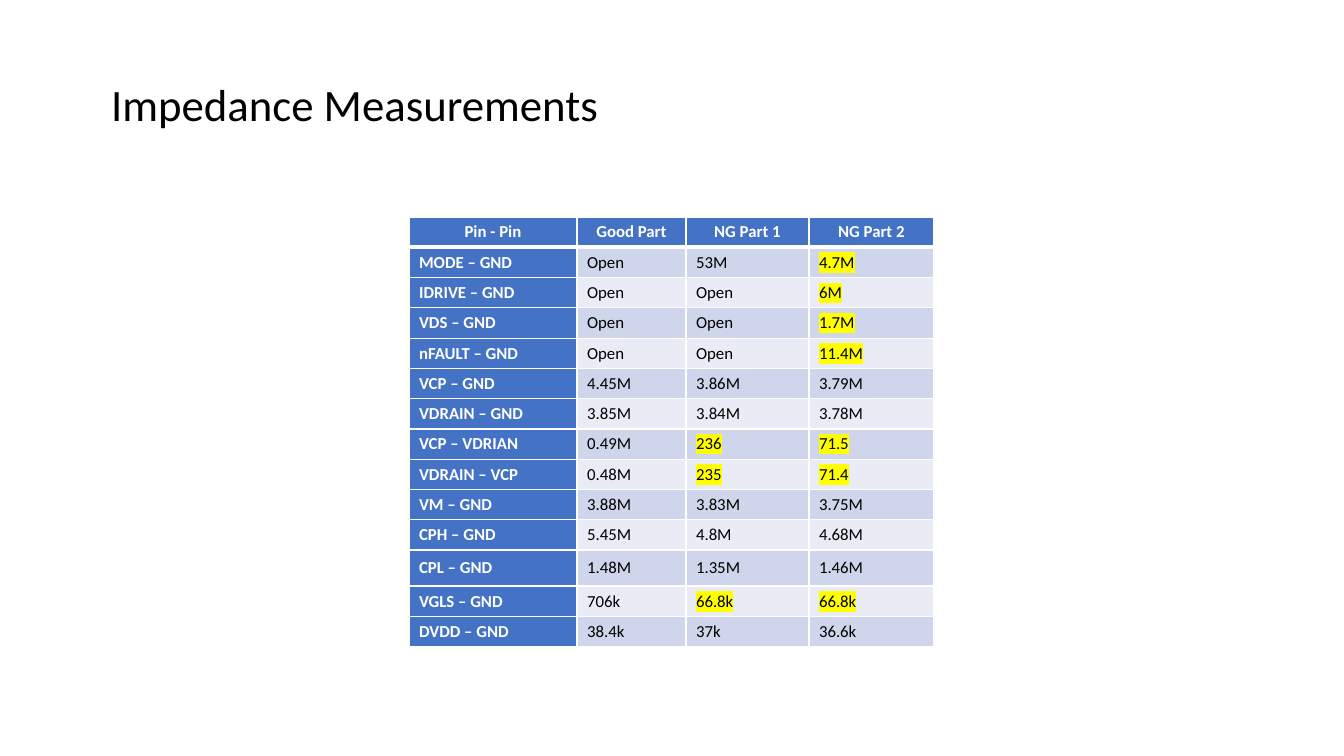
from lxml import etree
from pptx import Presentation
from pptx.dml.color import RGBColor
from pptx.enum.text import MSO_ANCHOR, MSO_AUTO_SIZE, PP_ALIGN
from pptx.oxml.ns import qn
from pptx.util import Emu, Pt

LEFT = PP_ALIGN.LEFT
CENTER = PP_ALIGN.CENTER
JUSTIFY = PP_ALIGN.JUSTIFY
TOP = MSO_ANCHOR.TOP
MIDDLE = MSO_ANCHOR.MIDDLE
FIT_SHAPE = MSO_AUTO_SIZE.SHAPE_TO_FIT_TEXT

WHITE = RGBColor(0xFF, 0xFF, 0xFF)
BLACK = RGBColor(0x00, 0x00, 0x00)
BLUE = RGBColor(0x44, 0x72, 0xC4)
BAND_DARK = RGBColor(0xCF, 0xD5, 0xEA)
BAND_LIGHT = RGBColor(0xE9, 0xEB, 0xF5)
YELLOW = RGBColor(0xFF, 0xFF, 0x00)

SLIDE_WIDTH, SLIDE_HEIGHT = 1344, 756
EMU_PER_PX = 12192000 / SLIDE_WIDTH
TITLE_ONLY = 5

HEADINGS = ("Pin - Pin", "Good Part", "NG Part 1", "NG Part 2")
MEASUREMENTS = (
    ("MODE – GND", "Open", "53M", "4.7M"),
    ("IDRIVE – GND", "Open", "Open", "6M"),
    ("VDS – GND", "Open", "Open", "1.7M"),
    ("nFAULT – GND", "Open", "Open", "11.4M"),
    ("VCP – GND", "4.45M", "3.86M", "3.79M"),
    ("VDRAIN – GND", "3.85M", "3.84M", "3.78M"),
    ("VCP – VDRIAN", "0.49M", "236", "71.5"),
    ("VDRAIN – VCP", "0.48M", "235", "71.4"),
    ("VM – GND", "3.88M", "3.83M", "3.75M"),
    ("CPH – GND", "5.45M", "4.8M", "4.68M"),
    ("CPL – GND", "1.48M", "1.35M", "1.46M"),
    ("VGLS – GND", "706k", "66.8k", "66.8k"),
    ("DVDD – GND", "38.4k", "37k", "36.6k"),
)
SUSPECT_READINGS = {"4.7M", "6M", "1.7M", "11.4M", "236", "71.5", "235", "71.4", "66.8k"}
COLUMN_WIDTHS = (168, 109, 123, 125)
ROW_HEIGHT = 30
TALL_ROW_HEIGHT = 36
TALL_PIN = "CPL – GND"


def px(length):
    return Emu(round(length * EMU_PER_PX))


class SlideBuilder:
    font = "Calibri"
    title_size = 32
    cell_size = 12

    def __init__(self, deck):
        self.slide = deck.slides.add_slide(deck.slide_layouts[TITLE_ONLY])

    def run(self, paragraph, text, size, color, bold=False, highlight=None):
        run = paragraph.add_run()
        run.text = text
        run.font.size = Pt(size)
        run.font.bold = bold
        run.font.color.rgb = color
        run.font.name = self.font
        if highlight is not None:
            mark = etree.Element(qn("a:highlight"))
            etree.SubElement(mark, qn("a:srgbClr"), val=str(highlight))
            run._r.get_or_add_rPr().find(qn("a:solidFill")).addnext(mark)

    def title(self, text, left, top, width, height):
        title = self.slide.shapes.title
        title.left, title.top = px(left), px(top)
        title.width, title.height = px(width), px(height)
        frame = title.text_frame
        frame.word_wrap = True
        frame.auto_size = FIT_SHAPE
        frame.vertical_anchor = TOP
        paragraph = frame.paragraphs[0]
        paragraph.alignment = LEFT
        self.run(paragraph, text, self.title_size, BLACK)

    def borders(self, cell, top, bottom):
        properties = cell._tc.get_or_add_tcPr()
        sides = (("a:lnL", 1), ("a:lnR", 1), ("a:lnT", top), ("a:lnB", bottom))
        for position, (side, points) in enumerate(sides):
            line = etree.Element(qn(side), w=str(Pt(points)))
            fill = etree.SubElement(line, qn("a:solidFill"))
            etree.SubElement(fill, qn("a:srgbClr"), val=str(WHITE))
            properties.insert(position, line)

    def cell(self, cell, text, row, column):
        is_heading = row == 0
        is_label = is_heading or column == 0
        band = BAND_DARK if row % 2 else BAND_LIGHT
        cell.fill.solid()
        cell.fill.fore_color.rgb = BLUE if is_label else band
        self.borders(cell, 3 if row == 1 else 1, 3 if is_heading else 1)
        cell.vertical_anchor = MIDDLE
        paragraph = cell.text_frame.paragraphs[0]
        paragraph.alignment = CENTER if is_heading else JUSTIFY
        self.run(paragraph, text, self.cell_size, WHITE if is_label else BLACK,
                 is_label, YELLOW if text in SUSPECT_READINGS else None)

    def table(self, records, left, top, widths, heights):
        table = self.slide.shapes.add_table(
            len(records), len(widths), px(left), px(top),
            px(sum(widths)), px(sum(heights))).table
        table.horz_banding = False
        for column, width in zip(table.columns, widths):
            column.width = px(width)
        for row, height in zip(table.rows, heights):
            row.height = px(height)
        for row, record in enumerate(records):
            for column, text in enumerate(record):
                self.cell(table.cell(row, column), text, row, column)


def main():
    deck = Presentation()
    deck.slide_width, deck.slide_height = px(SLIDE_WIDTH), px(SLIDE_HEIGHT)
    builder = SlideBuilder(deck)
    builder.title("Impedance Measurements", 101, 72, 622, 64)
    records = (HEADINGS,) + MEASUREMENTS
    heights = [TALL_ROW_HEIGHT if record[0] == TALL_PIN else ROW_HEIGHT
               for record in records]
    builder.table(records, 409, 217, COLUMN_WIDTHS, heights)
    deck.save("out.pptx")


if __name__ == "__main__":
    main()
